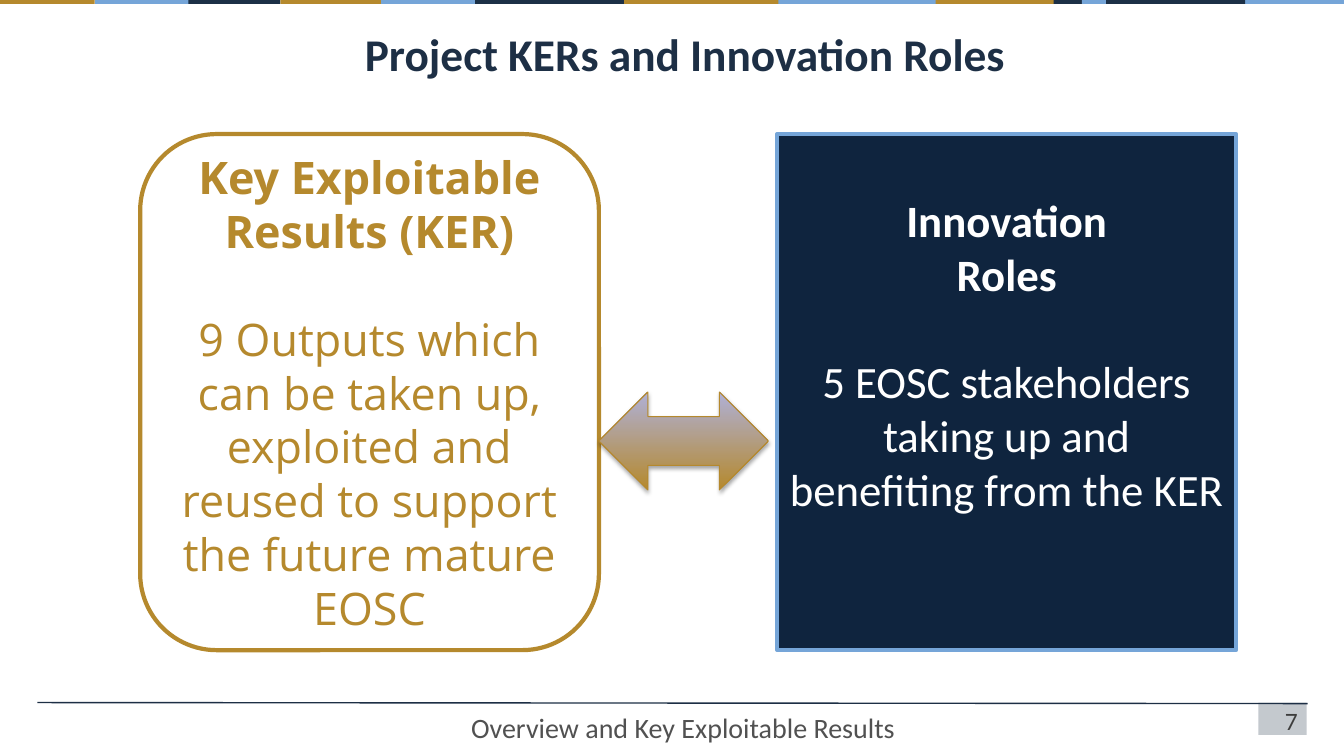
"""Build the slide on project KERs and innovation roles."""
import pptx
import pptx.util
import pptx.dml.color
import pptx.enum.shapes
import pptx.enum.text
import pptx.oxml.ns
from lxml import etree

Inches, Pt = pptx.util.Inches, pptx.util.Pt
RGB = pptx.dml.color.RGBColor
KIND = pptx.enum.shapes.MSO_SHAPE
ALIGN = pptx.enum.text.PP_ALIGN
ANCHOR = pptx.enum.text.MSO_ANCHOR
qn = pptx.oxml.ns.qn

INK = RGB(0x1D, 0x2F, 0x45)
NAVY = RGB(0x1C, 0x30, 0x46)
DEEP = RGB(0x0F, 0x24, 0x3E)
GOLD = RGB(0xB5, 0x89, 0x2D)
BLUE = RGB(0x75, 0xA5, 0xD8)
LILAC = RGB(0xAF, 0xB0, 0xD6)
WHITE = RGB(0xFF, 0xFF, 0xFF)
GREY = RGB(0x51, 0x51, 0x51)
DARK = RGB(0x3D, 0x3D, 0x3D)

STRIP = [
    (4.54, 1.65, NAVY), (8.66, 4.62, GOLD), (12.25, 1.09, BLUE),
    (2.78, 1.48, GOLD), (10.45, 1.9, NAVY), (7.61, 1.67, BLUE),
    (1.86, 0.92, NAVY), (0.94, 0.93, BLUE), (3.78, 0.93, BLUE),
    (6.19, 1.53, GOLD), (10.73, 0.24, BLUE), (0, 0.94, GOLD),
]
LABELS = [
    ("7", (9.56, 6.98, 3.41, 0.31), ALIGN.RIGHT, 16, "Lato", DARK, False),
    ("Project KERs and Innovation Roles", (3.52, 0.21, 9.45, 0.59),
     ALIGN.LEFT, 32.4, "Calibri", INK, True),
    ("Overview and Key Exploitable Results", (3.83, 7, 5.89, 0.44),
     ALIGN.CENTER, 20, "Calibri", GREY, False),
]
KER = [
    ("Key Exploitable Results (KER)", True, 0),
    ("9 Outputs which can be taken up, exploited and reused to support "
     "the future mature EOSC", False, 1),
]
ROLES = [
    ("Innovation", True, 0),
    ("Roles", True, 0),
    ("5 EOSC stakeholders taking up and benefiting from the KER", False, 1),
]
PITCH = 38.4


def add_part(slide, kind, box, fill=None, line=None, width=3, alpha=None):
    part = slide.shapes.add_shape(kind, *map(Inches, box))
    part.shadow.inherit = False
    if fill is not None:
        part.fill.solid()
        part.fill.fore_color.rgb = fill
    if alpha:
        tint = part._element.spPr.find(qn("a:solidFill"))[0]
        etree.SubElement(tint, qn("a:alpha"), val=str(alpha * 1000))
    if line is None:
        part.line.fill.background()
    else:
        part.line.color.rgb = line
        part.line.width = Pt(width)
    return part


def style(para, text, align, size, face, color, bold):
    para.text = text
    para.alignment = align
    font = para.font
    font.size, font.name, font.bold = Pt(size), face, bold
    font.color.rgb = color


def fill_card(card, rows, face, color, anchor, top):
    frame = card.text_frame
    frame.word_wrap = True
    frame.vertical_anchor = anchor
    frame.margin_top = Inches(top)
    for i, (text, bold, gap) in enumerate(rows):
        para = frame.add_paragraph() if i else frame.paragraphs[0]
        style(para, text, ALIGN.CENTER, 32, face, color, bold)
        para.line_spacing = Pt(PITCH)
        if gap:
            para.space_before = Pt(PITCH * gap)


def add_arrow(slide):
    arrow = add_part(slide, KIND.LEFT_RIGHT_ARROW, (5.94, 3.89, 1.68, 0.97),
                     line=GOLD, width=0.75)
    arrow.fill.gradient()
    arrow.fill.gradient_angle = 90
    for stop, color in zip(arrow.fill.gradient_stops, (GOLD, LILAC)):
        stop.color.rgb = color
    effect = arrow._element.spPr.find(qn("a:effectLst"))
    shade = etree.SubElement(effect, qn("a:outerShdw"), blurRad=str(Pt(3.1)),
                             dist=str(Pt(1.8)), dir="5400000", rotWithShape="0")
    tint = etree.SubElement(shade, qn("a:srgbClr"), val="000000")
    etree.SubElement(tint, qn("a:alpha"), val="35000")


def main():
    deck = pptx.Presentation()
    deck.slide_width, deck.slide_height = Inches(13.33), Inches(7.5)
    slide = deck.slides.add_slide(deck.slide_layouts[6])

    add_part(slide, KIND.RECTANGLE, (12.48, 6.97, 0.48, 0.32), INK, alpha=26)
    rule = slide.shapes.add_connector(
        pptx.enum.shapes.MSO_CONNECTOR.STRAIGHT,
        *map(Inches, (12.97, 6.98, 0.37, 6.97)))
    rule.line.color.rgb = INK
    rule.line.width = Pt(1)
    etree.SubElement(rule._element.spPr, qn("a:effectLst"))

    for left, width, color in STRIP:
        add_part(slide, KIND.RECTANGLE, (left, 0, width, 0.04), color)

    for text, box, *look in LABELS:
        frame = slide.shapes.add_textbox(*map(Inches, box)).text_frame
        frame.word_wrap = True
        style(frame.paragraphs[0], text, *look)

    ker = add_part(slide, KIND.ROUNDED_RECTANGLE, (1.39, 1.33, 4.55, 5.12),
                   WHITE, GOLD, alpha=92)
    fill_card(ker, KER, "Open Sans", GOLD, ANCHOR.MIDDLE, 0.05)
    roles = add_part(slide, KIND.RECTANGLE, (7.71, 1.33, 4.55, 5.12), DEEP, BLUE)
    fill_card(roles, ROLES, "Calibri", WHITE, ANCHOR.TOP, 0.05 + PITCH / 72)
    add_arrow(slide)
    deck.save("out.pptx")


if __name__ == "__main__":
    main()
